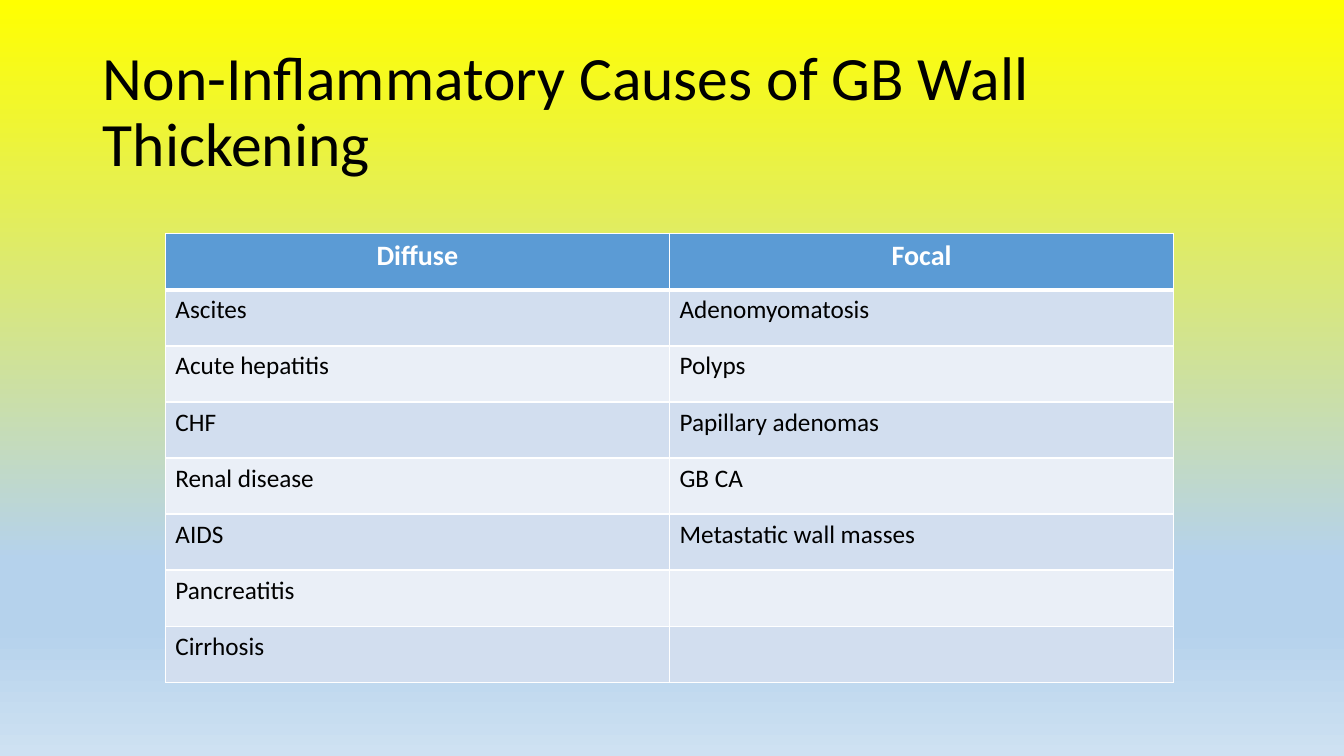
from dataclasses import dataclass
from itertools import zip_longest

from lxml import etree
from pptx import Presentation
from pptx.dml.color import RGBColor
from pptx.enum.text import MSO_ANCHOR, PP_ALIGN
from pptx.oxml.ns import qn
from pptx.util import Inches, Pt

MIDDLE = MSO_ANCHOR.MIDDLE
LEFT, CENTER = PP_ALIGN.LEFT, PP_ALIGN.CENTER
TITLE_ONLY = 5


@dataclass(frozen=True)
class Theme:
    font: str = "Calibri"
    text: str = "000000"
    header_text: str = "FFFFFF"
    header_fill: str = "5B9BD5"
    bands: tuple = ("D2DEEF", "EAEFF7")
    border: str = "FFFFFF"
    background: tuple = ((0, "FFFF00"), (74, "B5D2EC"), (83, "B5D2EC"), (100, "CEE1F2"))
    title_size: int = 44
    header_size: int = 20
    body_size: int = 18


@dataclass(frozen=True)
class CellStyle:
    fill: str
    color: str
    size: int
    bold: bool
    alignment: PP_ALIGN
    top_border: float = 1
    bottom_border: float = 1


@dataclass(frozen=True)
class CauseColumn:
    heading: str
    causes: tuple


THEME = Theme()
TITLE = "Non-Inflammatory Causes of GB Wall Thickening"
COLUMNS = (
    CauseColumn("Diffuse", ("Ascites", "Acute hepatitis", "CHF", "Renal disease",
                            "AIDS", "Pancreatitis", "Cirrhosis")),
    CauseColumn("Focal", ("Adenomyomatosis", "Polyps", "Papillary adenomas", "GB CA",
                          "Metastatic wall masses")),
)


def place(shape, left: float, top: float, width: float, height: float) -> None:
    box = {"left": left, "top": top, "width": width, "height": height}
    for name, value in box.items():
        setattr(shape, name, Inches(value))


def format_font(font, size: int, color: str, bold: bool = False) -> None:
    for name, value in {"name": THEME.font, "size": Pt(size), "bold": bold}.items():
        setattr(font, name, value)
    font.color.rgb = RGBColor.from_string(color)


def paint_background(slide) -> None:
    """Fill the background with the theme's gradient, running downwards."""
    fill = slide.background.fill
    fill.gradient()
    fill.gradient_angle = 270
    stops = slide.element.find(".//" + qn("a:gsLst"))
    for stop in list(stops):
        stops.remove(stop)
    for percent, color in THEME.background:
        stop = etree.SubElement(stops, qn("a:gs"), pos=str(percent * 1000))
        etree.SubElement(stop, qn("a:srgbClr"), val=color)


def add_title(slide) -> None:
    title = slide.shapes.title
    place(title, 0.92, 0.4, 11.5, 1.45)
    title.text_frame.text = TITLE
    title.text_frame.word_wrap = True
    title.text_frame.vertical_anchor = MIDDLE
    paragraph = title.text_frame.paragraphs[0]
    paragraph.alignment = LEFT
    paragraph.line_spacing = 0.9
    format_font(paragraph.runs[0].font, THEME.title_size, THEME.text)


def add_borders(cell, style: CellStyle) -> None:
    properties = cell._tc.get_or_add_tcPr()
    widths = {"a:lnL": 1, "a:lnR": 1, "a:lnT": style.top_border, "a:lnB": style.bottom_border}
    for tag, width in widths.items():
        line = etree.SubElement(properties, qn(tag), w=str(Pt(width)))
        solid_fill = etree.SubElement(line, qn("a:solidFill"))
        etree.SubElement(solid_fill, qn("a:srgbClr"), val=THEME.border)


def style_for_row(row: int) -> CellStyle:
    if row == 0:
        return CellStyle(THEME.header_fill, THEME.header_text, THEME.header_size,
                         True, CENTER, bottom_border=3)
    band = THEME.bands[(row - 1) % len(THEME.bands)]
    return CellStyle(band, THEME.text, THEME.body_size, False, LEFT,
                     top_border=3 if row == 1 else 1)


def fill_cell(cell, text: str, style: CellStyle) -> None:
    add_borders(cell, style)
    cell.fill.solid()
    cell.fill.fore_color.rgb = RGBColor.from_string(style.fill)
    if text:
        cell.text = text
        paragraph = cell.text_frame.paragraphs[0]
        paragraph.alignment = style.alignment
        format_font(paragraph.runs[0].font, style.size, style.color, style.bold)


def add_causes_table(slide) -> None:
    rows = [[column.heading for column in COLUMNS]]
    rows += zip_longest(*(column.causes for column in COLUMNS), fillvalue="")
    table = slide.shapes.add_table(len(rows), len(COLUMNS), Inches(1.64), Inches(2.32),
                                   Inches(10), Inches(4.45)).table
    for row, texts in enumerate(rows):
        for column, text in enumerate(texts):
            fill_cell(table.cell(row, column), text, style_for_row(row))


def main() -> None:
    presentation = Presentation()
    presentation.slide_width = Inches(13.33)
    presentation.slide_height = Inches(7.5)
    slide = presentation.slides.add_slide(presentation.slide_layouts[TITLE_ONLY])
    paint_background(slide)
    add_title(slide)
    add_causes_table(slide)
    presentation.save("out.pptx")


if __name__ == "__main__":
    main()
